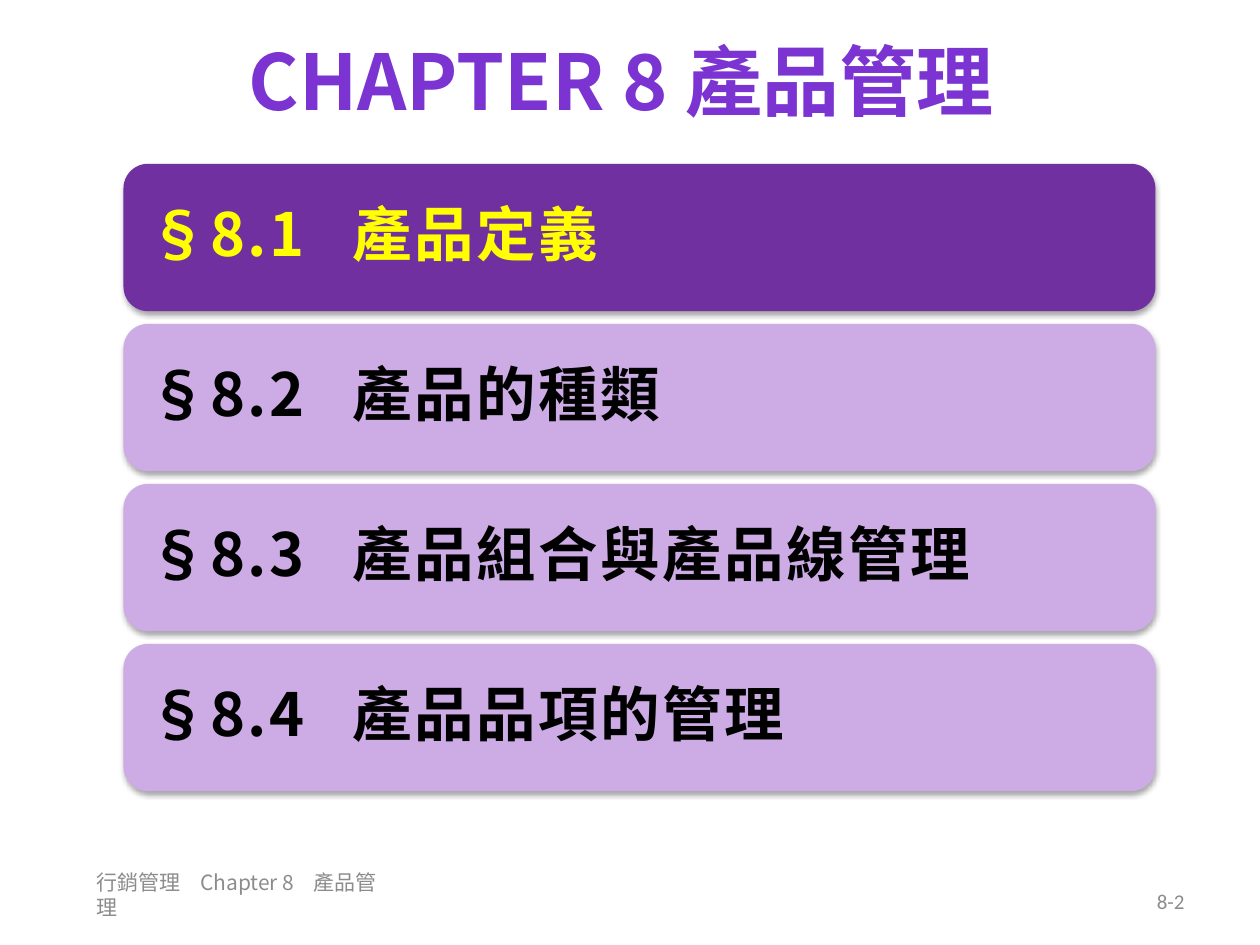
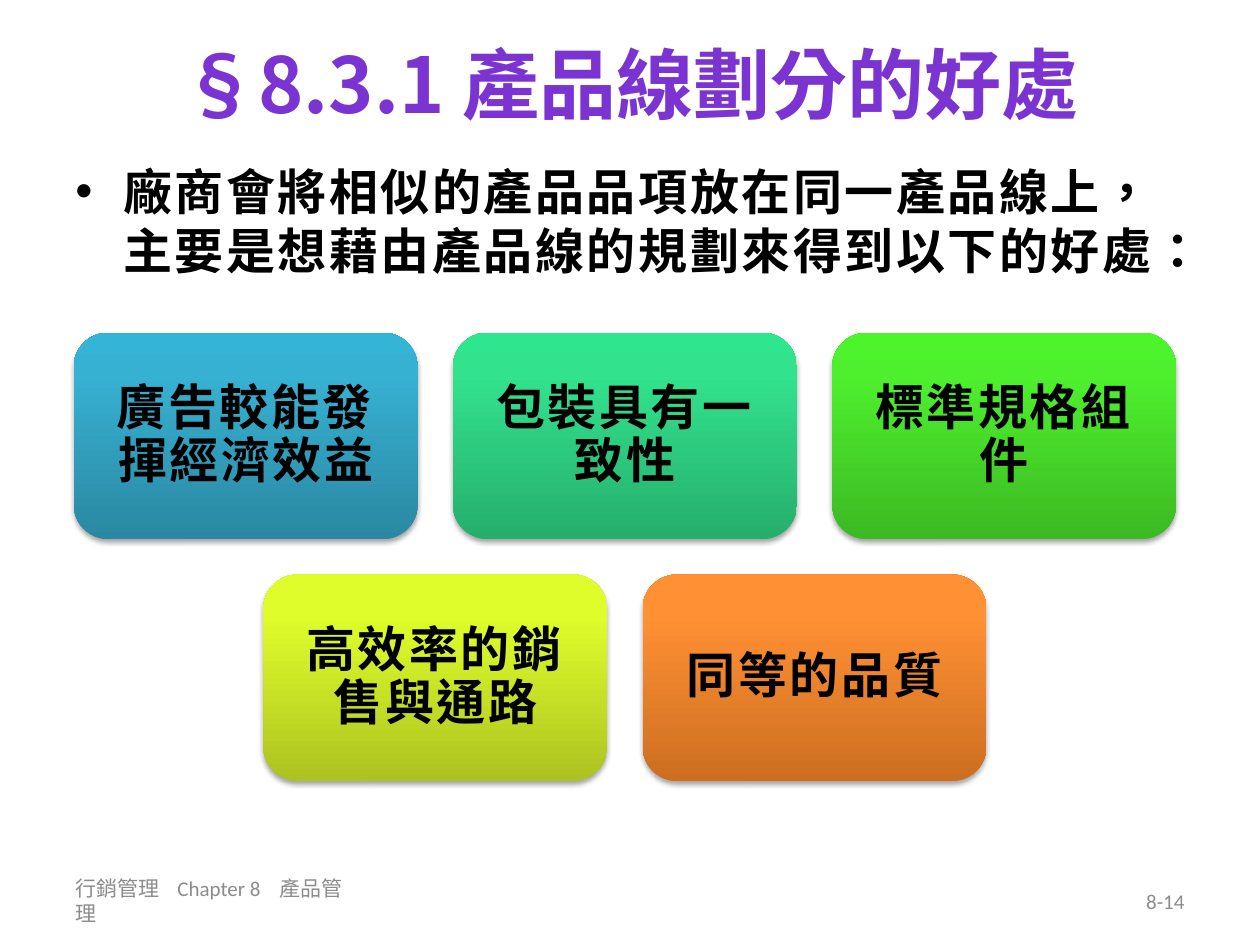
from dataclasses import dataclass

from lxml.etree import SubElement
from pptx import Presentation
from pptx.dml.color import RGBColor
from pptx.enum.shapes import MSO_SHAPE
from pptx.enum.text import MSO_ANCHOR, MSO_AUTO_SIZE, PP_ALIGN
from pptx.oxml import parse_xml
from pptx.oxml.ns import nsdecls, qn
from pptx.util import Inches, Pt


@dataclass(frozen=True)
class Theme:
    latin: str = "Calibri"
    chinese: str = "Noto Sans CJK SC"
    title: str = "7B34D2"
    text: str = "000000"
    footer: str = "8C8C8C"
    active: str = "7030A0"
    active_text: str = "FFFF00"
    inactive: str = "CDACE6"
    title_size: int = 44
    section_size: int = 34
    body_size: int = 28
    footer_size: int = 12
    spacing: int = 150


theme = Theme()


def add_text(shape, text, size, color, font, bold=False, spacing=0, align=PP_ALIGN.LEFT,
             anchor=MSO_ANCHOR.MIDDLE, tabs=()):
    frame = shape.text_frame
    frame.word_wrap = True
    frame.auto_size = MSO_AUTO_SIZE.NONE
    frame.vertical_anchor = anchor
    paragraph = frame.paragraphs[0]
    paragraph.alignment = align
    if tabs:
        tab_list = SubElement(paragraph._p.get_or_add_pPr(), qn("a:tabLst"))
        for position in tabs:
            SubElement(tab_list, qn("a:tab"), pos=str(Inches(position)), algn="l")
    run = paragraph.add_run()
    run.text = text
    run.font.size = Pt(size)
    run.font.bold = bold
    run.font.name = font
    run.font.color.rgb = RGBColor.from_string(color)
    properties = run._r.get_or_add_rPr()
    properties.set("lang", "zh-TW")
    if spacing:
        properties.set("spc", str(spacing))
    SubElement(properties, qn("a:ea"), typeface=theme.chinese)
    return paragraph


def add_card(slide, left, top, width, height, inset, text, size, color, font, **options):
    card = slide.shapes.add_shape(
        MSO_SHAPE.ROUNDED_RECTANGLE, Inches(left), Inches(top), Inches(width), Inches(height))
    card.line.fill.background()
    card.shadow.inherit = False
    effects = card._element.spPr.find(qn("a:effectLst"))
    effects.append(parse_xml(
        f'<a:outerShdw {nsdecls("a")} blurRad="{Pt(3.1)}" dist="{Pt(1.8)}" dir="5400000" '
        'rotWithShape="0"><a:srgbClr val="000000"><a:alpha val="35000"/></a:srgbClr></a:outerShdw>'))
    frame = card.text_frame
    frame.margin_left = frame.margin_right = Inches(inset)
    frame.margin_top = frame.margin_bottom = Inches(inset)
    paragraph = add_text(card, text, size, color, font, True, theme.spacing, **options)
    paragraph.line_spacing = 0.9
    paragraph.space_after = Pt(0.35 * size)
    return card


presentation = Presentation()
presentation.slide_width = Inches(10)
presentation.slide_height = Inches(7.5)

pages = [
    ("CHAPTER 8 產品管理", (0.43, 0.04, 9, 1.19), "8-2",
     (0.67, 6.9, 2.44, 0.4), theme.chinese, (0.82, 1.72)),
    ("§8.3.1 產品線劃分的好處", (0.5, 0, 9, 1.31), "8-14",
     (0.5, 6.95, 2.33, 0.4), theme.latin, (0.81, 1.62)),
]
for title_text, title_place, number, footer_place, footer_font, footer_tabs in pages:
    slide = presentation.slides.add_slide(presentation.slide_layouts[5])
    title = slide.shapes.title
    title.left, title.top, title.width, title.height = map(Inches, title_place)
    add_text(title, title_text, theme.title_size, theme.title, theme.chinese, True,
             align=PP_ALIGN.CENTER)
    footer = slide.shapes.add_textbox(*map(Inches, footer_place))
    add_text(footer, "行銷管理\tChapter 8\t產品管理", theme.footer_size, theme.footer,
             footer_font, tabs=footer_tabs)
    page_number = slide.shapes.add_textbox(
        Inches(7.17), Inches(6.95), Inches(2.33), Inches(0.4))
    add_text(page_number, number, theme.footer_size, theme.footer, theme.latin,
             align=PP_ALIGN.RIGHT)

contents_slide, benefits_slide = presentation.slides

sections = ["產品定義", "產品的種類", "產品組合與產品線管理", "產品品項的管理"]
for index, section in enumerate(sections):
    is_active = index == 0
    card = add_card(
        contents_slide, 0.98, 1.3 + 1.27 * index, 8.19, 1.17, 0.14,
        f"§8.{index + 1}\t{section}", theme.section_size,
        theme.active_text if is_active else theme.text, theme.chinese, tabs=(1.62,))
    card.fill.solid()
    card.fill.fore_color.rgb = RGBColor.from_string(
        theme.active if is_active else theme.inactive)

introduction = benefits_slide.shapes.add_textbox(
    Inches(0.5), Inches(1.23), Inches(9), Inches(1.18))
paragraph = add_text(
    introduction,
    "廠商會將相似的產品品項放在同一產品線上，主要是想藉由產品線的規劃來得到以下的好處：",
    theme.body_size, theme.text, theme.latin, True, theme.spacing, anchor=MSO_ANCHOR.TOP)
paragraph_properties = paragraph._p.get_or_add_pPr()
paragraph_properties.set("marL", str(Inches(0.38)))
paragraph_properties.set("indent", str(-Inches(0.38)))
SubElement(paragraph_properties, qn("a:buFont"), typeface="Arial")
SubElement(paragraph_properties, qn("a:buChar"), char="•")

benefit_rows = [
    [("廣告較能發揮經濟效益", ("2A88A2", "37B1D2", "34B4D6")),
     ("包裝具有一致性", ("26AE6D", "32E28D", "2EE68E")),
     ("標準規格組件", ("3CB923", "4EF02E", "4CF52A"))],
    [("高效率的銷售與通路", ("ACC321", "DFFD2B", "E1FF2B")),
     ("同等的品質", ("CC6E20", "FF9034", "FF9136"))],
]
card_width, card_height, gap, center = 2.73, 1.64, 0.28, 4.96
for row_index, row in enumerate(benefit_rows):
    row_left = center - (len(row) * (card_width + gap) - gap) / 2
    for column, (benefit, colors) in enumerate(row):
        card = add_card(
            benefits_slide, row_left + column * (card_width + gap),
            2.64 + row_index * (card_height + gap), card_width, card_height, 0.12,
            benefit, theme.body_size, theme.text, theme.latin, align=PP_ALIGN.CENTER)
        stops = "".join(
            f'<a:gs pos="{position}000"><a:srgbClr val="{color}"/></a:gs>'
            for position, color in zip((0, 80, 100), colors))
        card._element.spPr.find(qn("a:prstGeom")).addnext(parse_xml(
            f'<a:gradFill {nsdecls("a")} rotWithShape="1"><a:gsLst>{stops}</a:gsLst>'
            '<a:lin ang="16200000" scaled="0"/></a:gradFill>'))

presentation.save("out.pptx")
